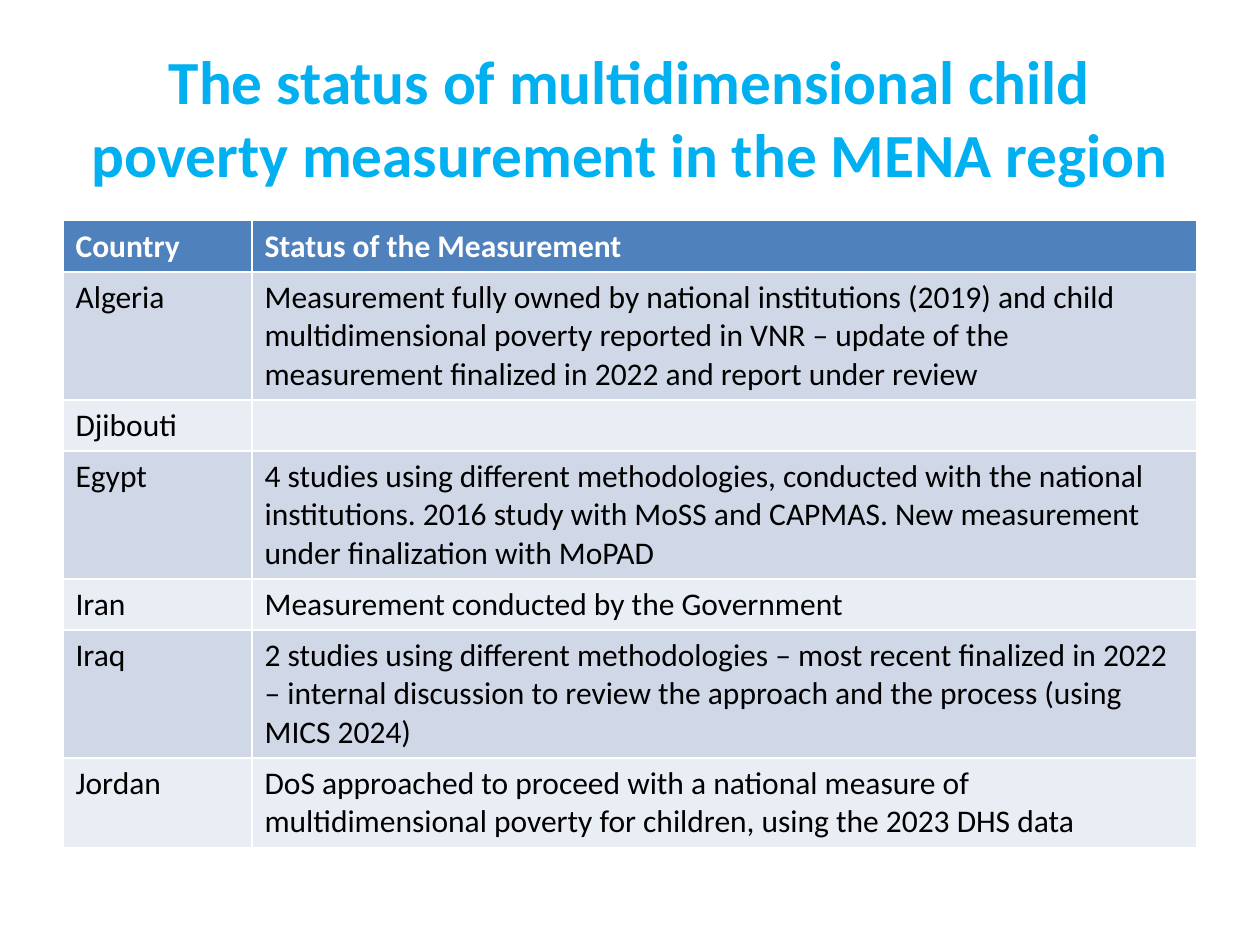
from pptx import Presentation, util as u
from pptx.dml.color import RGBColor
from pptx.enum import text
from pptx.util import Cm

COLORS = {
    "title": "00B0F0",
    "header": "4F81BD",
    "odd": "D0D8E8",
    "even": "E9EDF4",
    "light": "FFFFFF",
    "dark": "000000",
}
TITLE = "The status of multidimensional child poverty measurement in the MENA region"
ROWS = [
    ("Country", "Status of the Measurement"),
    ("Algeria", "Measurement fully owned by national institutions (2019) and child "
                "multidimensional poverty reported in VNR – update of the measurement "
                "finalized in 2022 and report under review"),
    ("Djibouti", ""),
    ("Egypt", "4 studies using different methodologies, conducted with the national "
              "institutions. 2016 study with MoSS and CAPMAS. New measurement under "
              "finalization with MoPAD"),
    ("Iran", "Measurement conducted by the Government"),
    ("Iraq", "2 studies using different methodologies – most recent finalized in 2022 – "
             "internal discussion to review the approach and the process (using MICS 2024)"),
    ("Jordan", "DoS approached to proceed with a national measure of multidimensional "
               "poverty for children, using the 2023 DHS data"),
]


def rgb(name):
    return RGBColor.from_string(COLORS[name])


def write(tf, content, size=18, color="dark", bold=False, align=None):
    p = tf.paragraphs[0]
    p.alignment = align
    if not content:
        return
    r = p.add_run()
    r.text = content
    r.font.name = "Calibri"
    r.font.size = u.Pt(size)
    r.font.bold = bold
    r.font.color.rgb = rgb(color)


def place_title(s, left, top, width, height):
    sp = s.shapes.title
    sp.left, sp.top, sp.width, sp.height = left, top, width, height
    tf = sp.text_frame
    tf.word_wrap = True
    tf.auto_size = text.MSO_AUTO_SIZE.NONE
    tf.vertical_anchor = text.MSO_ANCHOR.MIDDLE
    write(tf, TITLE, size=35, color="title", bold=True, align=text.PP_ALIGN.CENTER)


def add_status_table(s, left, top, width, row_height):
    """Countries take a sixth of the width; rows grow with their text."""
    table = s.shapes.add_table(len(ROWS), 2, left, top, width,
                               row_height * len(ROWS)).table
    table.columns[0].width = width // 6
    table.columns[1].width = width - width // 6
    for i, row in enumerate(ROWS):
        header = i == 0
        fill = "header" if header else ("even", "odd")[i % 2]
        for cell, content in zip(table.rows[i].cells, row):
            cell.fill.solid()
            cell.fill.fore_color.rgb = rgb(fill)
            write(cell.text_frame, content, bold=header,
                  color="light" if header else "dark")


def main():
    prs = Presentation()
    prs.slide_width, prs.slide_height = Cm(25.4), Cm(19.05)
    s = prs.slides.add_slide(prs.slide_layouts[5])
    margin = Cm(1.27)
    width = prs.slide_width - 2 * margin
    place_title(s, margin, Cm(0.76), width, Cm(3.18))
    add_status_table(s, margin, Cm(4.45), width, Cm(1.03))
    prs.save("out.pptx")


if __name__ == "__main__":
    main()
